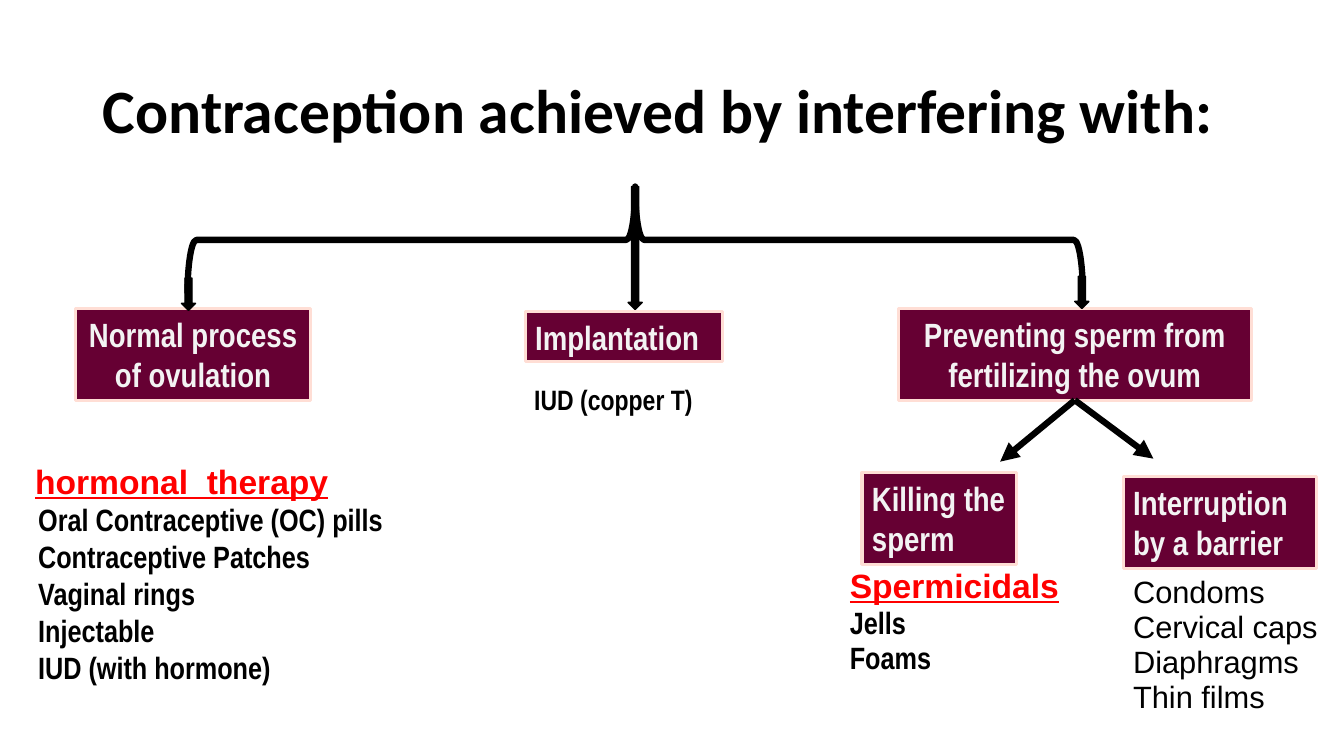
from dataclasses import dataclass
from typing import Any, NamedTuple

from lxml import etree
from pptx import Presentation
from pptx.dml.color import RGBColor
from pptx.enum.shapes import MSO_CONNECTOR, MSO_SHAPE
from pptx.enum.text import MSO_ANCHOR, MSO_AUTO_SIZE, PP_ALIGN
from pptx.oxml.ns import qn
from pptx.util import Emu, Pt

LEFT, CENTER = PP_ALIGN.LEFT, PP_ALIGN.CENTER
TOP, MIDDLE = MSO_ANCHOR.TOP, MSO_ANCHOR.MIDDLE
GROW = MSO_AUTO_SIZE.SHAPE_TO_FIT_TEXT
RECT, BRACE, ARROW = MSO_SHAPE.RECTANGLE, MSO_SHAPE.RIGHT_BRACE, MSO_SHAPE.DOWN_ARROW
STRAIGHT = MSO_CONNECTOR.STRAIGHT
BOTTOM = 2
SCALE = 9144  # EMU in one px, 100 px to the inch


class Style(NamedTuple):
    name: str
    size: Pt
    color: str
    bold: bool = True
    underline: bool = False


@dataclass(frozen=True)
class Theme:
    ink: str = "000000"
    fill: str = "660033"
    edge: str = "FFDED5"
    rim: float = 2.25
    thin: float = 1
    thick: float = 4.5
    title: Style = Style("Calibri", Pt(44), "000000")
    box: Style = Style("Arial Narrow", Pt(24), "F3F3F3")
    head: Style = Style("Arial", Pt(24), "FF0000", underline=True)
    item: Style = Style("Arial Narrow", Pt(22), "000000")
    small: Style = Style("Arial Narrow", Pt(20), "000000")
    plain: Style = Style("Arial", Pt(22), "000000", bold=False)


THEME = Theme()


class Area(NamedTuple):
    x: int
    y: int
    w: int
    h: int


@dataclass(frozen=True)
class Box:
    area: Area
    text: str
    align: Any = LEFT


@dataclass(frozen=True)
class Note:
    area: Area
    lines: list[tuple[str, Style]]
    pitch: Any = None


def lines(style: Style, *texts: str) -> list[tuple[str, Style]]:
    return [(text, style) for text in texts]


CAUSE = Box(Area(891, 306, 350, 91), "Preventing sperm from fertilizing the ovum", CENTER)
BOXES = [
    Box(Area(75, 306, 233, 91), "Normal process of ovulation", CENTER),
    Box(Area(521, 309, 196, 50), "Implantation"),
    CAUSE,
    Box(Area(855, 469, 153, 91), "Killing the sperm"),
    Box(Area(1114, 473, 192, 91), "Interruption by a barrier"),
]
NOTES = [
    Note(Area(25, 452, 351, 50), lines(THEME.head, "hormonal  therapy")),
    Note(Area(28, 492, 392, 195), lines(
        THEME.item, "Oral Contraceptive (OC) pills", "Contraceptive Patches",
        "Vaginal rings", "Injectable", "IUD (with hormone)")),
    Note(Area(520, 373, 192, 43), lines(THEME.small, "IUD (copper T)"), Pt(25)),
    Note(Area(833, 561, 241, 115),
         lines(THEME.head, "Spermicidals") + lines(THEME.item, "Jells", "Foams"), Pt(25)),
    Note(Area(1114, 565, 220, 150), lines(
        THEME.plain, "Condoms", "Cervical caps Diaphragms", "Thin films"), Pt(25)),
]
FORK = Area(577, -206, 106, 888)
ARROWS = [Area(180, 276, 14, 32), Area(623, 185, 14, 122), Area(1066, 274, 14, 32)]
TIPS = [(992, 458), (1144, 455)]


def px(*values: int) -> list[Emu]:
    return [Emu(value * SCALE) for value in values]


def rgb(code: str) -> RGBColor:
    return RGBColor.from_string(code)


def write(frame: Any, rows: list[tuple[str, Style]], anchor: Any = TOP,
          align: Any = LEFT, pitch: Any = None) -> None:
    frame.word_wrap = True
    frame.vertical_anchor = anchor
    for pos, (text, style) in enumerate(rows):
        para = frame.paragraphs[0] if pos == 0 else frame.add_paragraph()
        para.alignment = align
        para.line_spacing = pitch
        run = para.add_run()
        run.text = text
        form = style._asdict()
        run.font.color.rgb = rgb(form.pop("color"))
        for key, value in form.items():
            setattr(run.font, key, value)


def draw(shapes: Any, kind: Any, area: Area, edge: str, width: float,
         fill: str | None = None) -> Any:
    shape = shapes.add_shape(kind, *px(*area))
    shape.shadow.inherit = False
    if fill:
        shape.fill.solid()
        shape.fill.fore_color.rgb = rgb(fill)
    else:
        shape.fill.background()
    shape.line.color.rgb = rgb(edge)
    shape.line.width = Pt(width)
    return shape


def add_box(shapes: Any, box: Box) -> Any:
    shape = draw(shapes, RECT, box.area, THEME.edge, THEME.rim, THEME.fill)
    write(shape.text_frame, lines(THEME.box, box.text), align=box.align)
    shape.text_frame.auto_size = GROW
    return shape


def add_note(shapes: Any, note: Note) -> None:
    frame = shapes.add_textbox(*px(*note.area)).text_frame
    write(frame, note.lines, pitch=note.pitch)
    frame.auto_size = GROW


def add_branch(shapes: Any, source: Any, tip: tuple[int, int]) -> None:
    """Draw an arrow from the bottom of the source box to the tip."""
    link = shapes.add_connector(STRAIGHT, 0, 0, *px(*tip))
    link.begin_connect(source, BOTTOM)
    link.line.color.rgb = rgb(THEME.ink)
    link.line.width = Pt(THEME.thick)
    line = link._element.spPr.find(qn("a:ln"))
    etree.SubElement(line, qn("a:tailEnd"), type="triangle")
    etree.SubElement(link._element.spPr, qn("a:effectLst"))


def main() -> None:
    deck = Presentation()
    deck.slide_width, deck.slide_height = px(1333, 750)
    slide = deck.slides.add_slide(deck.slide_layouts[5])
    shapes = slide.shapes

    title = shapes.title
    title.left, title.top, title.width, title.height = px(92, 40, 1150, 145)
    write(title.text_frame, lines(THEME.title, "Contraception achieved by interfering with:"),
          anchor=MIDDLE, pitch=0.9)

    made = {box: add_box(shapes, box) for box in BOXES}
    for note in NOTES:
        add_note(shapes, note)

    draw(shapes, BRACE, FORK, THEME.ink, THEME.thick).rotation = 270
    for area in ARROWS:
        draw(shapes, ARROW, area, THEME.ink, THEME.thin, THEME.ink)
    for tip in TIPS:
        add_branch(shapes, made[CAUSE], tip)

    deck.save("out.pptx")


if __name__ == "__main__":
    main()
